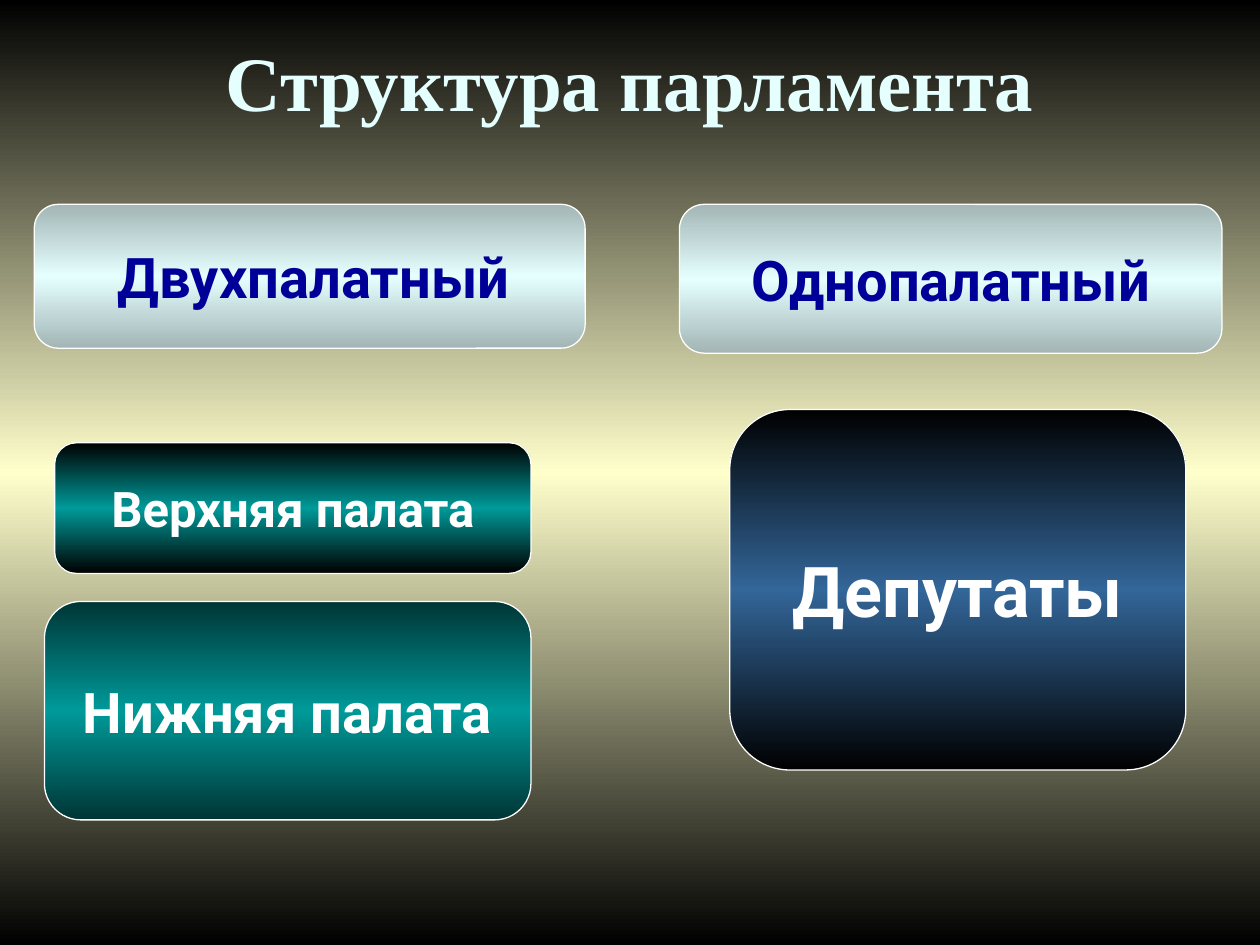
"""Build a slide on the structure of a parliament."""
from copy import deepcopy

from lxml import etree
from pptx import Presentation
from pptx.dml.color import RGBColor
from pptx.enum.shapes import MSO_SHAPE
from pptx.enum.text import MSO_ANCHOR, PP_ALIGN
from pptx.oxml.ns import qn
from pptx.util import Pt

ROUND = MSO_SHAPE.ROUNDED_RECTANGLE
MIDDLE = MSO_ANCHOR.MIDDLE
CENTER = PP_ALIGN.CENTER

THEME = {
    "cream": "FFFFCC", "ice": "E5FFFF", "teal": "009999", "steel": "336699",
    "navy": "000099", "white": "FFFFFF",
    "head": "Times New Roman", "body": "Roboto",
    "title": 44, "large": 40, "mid": 32, "small": 28, "tiny": 18,
}


def blend(fill, root, tone, shade):
    """Fade a colour from its shade to full and back, top to bottom."""
    fill.gradient()
    fill.gradient_angle = 270
    stops = root.xpath(".//a:gsLst")[0]
    stops.append(deepcopy(stops[0]))
    for i, stop in enumerate(fill.gradient_stops):
        stop.position = i / 2
        stop.color.rgb = RGBColor.from_string(THEME[tone])
        if i != 1:
            mark = etree.SubElement(stops[i][0], qn("a:shade"))
            mark.set("val", str(shade * 1000))


def write(frame, runs, face):
    """Fill a text frame with centred runs of text, size, colour and weight."""
    frame.vertical_anchor = MIDDLE
    para = frame.paragraphs[0]
    para.alignment = CENTER
    for text, size, tone, bold in runs:
        run = para.add_run()
        run.text = text
        run.font.name = THEME[face]
        run.font.size = Pt(THEME[size])
        run.font.bold = bold
        run.font.color.rgb = RGBColor.from_string(THEME[tone])


deck = Presentation()
deck.slide_width, deck.slide_height = Pt(720), Pt(540)
slide = deck.slides.add_slide(deck.slide_layouts[6])
blend(slide.background.fill, slide.element, "cream", 0)

title = slide.shapes.add_textbox(Pt(36), Pt(15.1), Pt(648), Pt(62.6))
title.text_frame.word_wrap = True
write(title.text_frame, [("Структура парламента", "title", "ice", True)], "head")

space = (" ", "tiny", "white", False)
boxes = [
    (19.6, 116.8, 314.8, 82.2, "ice", 46,
     [space, ("Двухпалатный", "mid", "navy", True)]),
    (25.4, 343.7, 278, 124.8, "teal", 9,
     [("Нижняя палата", "mid", "white", True)]),
    (31.2, 253, 272.2, 74.7, "teal", 0,
     [("Верхняя палата", "small", "white", True)]),
    (388.3, 116.8, 310, 85, "ice", 46,
     [("Однопалатный", "mid", "navy", True)]),
    (417, 234, 260.6, 206, "steel", 0,
     [("Депутаты", "large", "white", True)]),
]
for left, top, width, height, tone, shade, runs in boxes:
    box = slide.shapes.add_shape(ROUND, Pt(left), Pt(top), Pt(width), Pt(height))
    box.shadow.inherit = False
    blend(box.fill, box.element, tone, shade)
    box.line.color.rgb = RGBColor.from_string(THEME["white"])
    box.line.width = Pt(0.75)
    box.text_frame.word_wrap = False
    write(box.text_frame, runs, "body")

deck.save("out.pptx")
